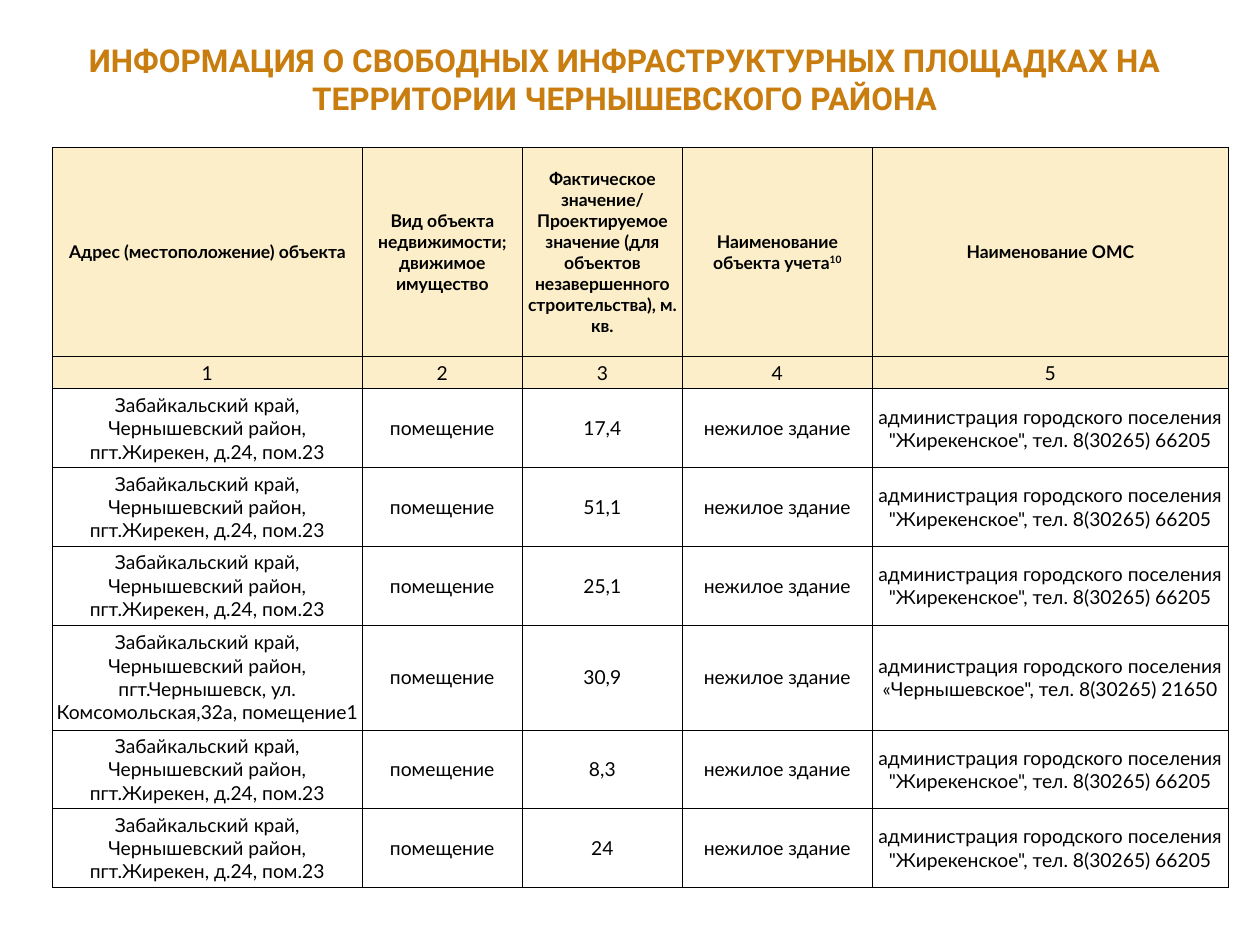
"""Build the slide listing free infrastructure sites of the district."""
from lxml import etree
from pptx import Presentation, util as u
from pptx.dml.color import RGBColor
from pptx.enum import text
from pptx.oxml import ns

COLORS = {"heading": "C87D0E", "header": "FBEEC9", "body": "FFFFFF", "ink": "000000"}
FORMATS = {
    "heading": {"name": "Roboto", "size": u.Pt(18), "bold": True},
    "header": {"name": "Lato", "size": u.Pt(10), "bold": True},
    "body": {"name": "Lato", "size": u.Pt(11), "bold": False},
}
CELL_FORMAT = {"margin_left": 0, "margin_right": 0, "margin_top": 0, "margin_bottom": 0,
               "vertical_anchor": text.MSO_ANCHOR.MIDDLE}
COLUMN_WIDTHS = [177, 91.5, 91.5, 108.5, 203.5]
ROW_HEIGHTS = [119.5, 18.5, 45, 45, 45, 60, 45, 45]

HEADERS = [
    "Адрес (местоположение) объекта",
    "Вид объекта недвижимости; движимое имущество",
    "Фактическое значение/ Проектируемое значение (для объектов незавершенного "
    "строительства), м. кв.",
    "Наименование объекта учета",
    "Наименование ОМС",
]
REGION = "Забайкальский край, Чернышевский район, "
ZHIREKEN = (REGION + "пгт.Жирекен, д.24, пом.23",
            'администрация городского поселения "Жирекенское", тел. 8(30265) 66205')
CHERNYSHEVSK = (REGION + "пгт.Чернышевск, ул. Комсомольская,32а, помещение1",
                'администрация городского поселения «Чернышевское", тел. 8(30265) 21650')
SITES = [(ZHIREKEN, "17,4"), (ZHIREKEN, "51,1"), (ZHIREKEN, "25,1"),
         (CHERNYSHEVSK, "30,9"), (ZHIREKEN, "8,3"), (ZHIREKEN, "24")]


def write(paragraph, wording, style, color):
    paragraph.alignment = text.PP_ALIGN.CENTER
    run = paragraph.add_run()
    run.text = wording
    for key, value in FORMATS[style].items():
        setattr(run.font, key, value)
    run.font.color.rgb = RGBColor.from_string(COLORS[color])
    return run


def add_borders(cell):
    properties = cell._tc.get_or_add_tcPr()
    for index, side in enumerate(("lnL", "lnR", "lnT", "lnB")):
        line = etree.Element(ns.qn("a:" + side), w=str(u.Pt(0.5)))
        fill = etree.SubElement(line, ns.qn("a:solidFill"))
        etree.SubElement(fill, ns.qn("a:srgbClr"), val=COLORS["ink"])
        properties.insert(index, line)


deck = Presentation()
deck.slide_width, deck.slide_height = u.Pt(720), u.Pt(540)
slide = deck.slides.add_slide(deck.slide_layouts[5])

heading = slide.shapes.title
heading.left, heading.top, heading.width, heading.height = map(u.Pt, (24, 18, 666, 54))
heading.text_frame.vertical_anchor = text.MSO_ANCHOR.MIDDLE
write(heading.text_frame.paragraphs[0],
      "ИНФОРМАЦИЯ О СВОБОДНЫХ ИНФРАСТРУКТУРНЫХ ПЛОЩАДКАХ НА ТЕРРИТОРИИ ЧЕРНЫШЕВСКОГО РАЙОНА",
      "heading", "heading")

contents = [HEADERS, [str(number) for number in range(1, 6)]]
for (address, authority), area in SITES:
    contents.append([address, "помещение", area, "нежилое здание", authority])

sites = slide.shapes.add_table(
    len(ROW_HEIGHTS), len(COLUMN_WIDTHS), u.Pt(30), u.Pt(84.25),
    u.Pt(sum(COLUMN_WIDTHS)), u.Pt(sum(ROW_HEIGHTS))).table
for column, width in zip(sites.columns, COLUMN_WIDTHS):
    column.width = u.Pt(width)
for row, height in zip(sites.rows, ROW_HEIGHTS):
    row.height = u.Pt(height)

for row_index, wordings in enumerate(contents):
    for column_index, wording in enumerate(wordings):
        cell = sites.cell(row_index, column_index)
        for key, value in CELL_FORMAT.items():
            setattr(cell, key, value)
        cell.fill.solid()
        cell.fill.fore_color.rgb = RGBColor.from_string(
            COLORS["header" if row_index < 2 else "body"])
        add_borders(cell)
        write(cell.text_frame.paragraphs[0], wording,
              "header" if row_index == 0 else "body", "ink")

footnote = write(sites.cell(0, 3).text_frame.paragraphs[0], "10", "header", "ink")
footnote._r.get_or_add_rPr().set("baseline", "30000")

deck.save("out.pptx")
